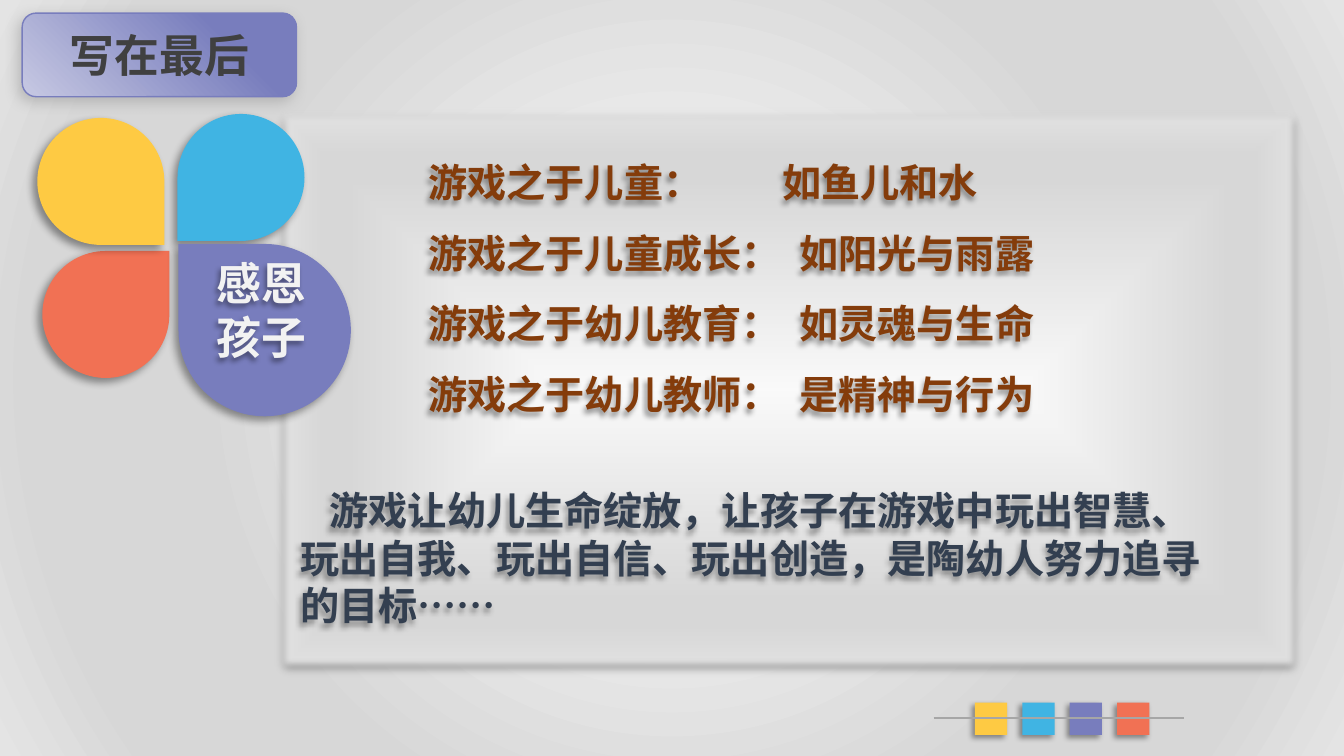
"""Build the closing slide with petals, a glowing panel and verses."""
from dataclasses import dataclass

import lxml.etree
import pptx
import pptx.dml.color
import pptx.enum.shapes
import pptx.enum.text
import pptx.oxml.ns
import pptx.util

Inches = pptx.util.Inches
Pt = pptx.util.Pt
Kind = pptx.enum.shapes.MSO_SHAPE
qn = pptx.oxml.ns.qn

FONT = "Noto Sans CJK SC"
HUES = {
    "yellow": "FECA43", "blue": "40B4E3", "violet": "787DBD", "coral": "F17154",
    "lilac": "C7C9E3", "rule": "A6A6A6", "title": "404040", "pale": "F2F2F2",
    "brown": "843C0B", "slate": "333F50", "black": "000000", "gray": "808080",
    "white": "FFFFFF", "snow": "FAFAFA", "silver": "D7D7D7", "mist": "E4E4E4",
}


@dataclass
class Petal:
    left: float
    top: float
    size: float
    turn: int
    hue: str


@dataclass
class Shade:
    blur: float
    dist: float
    angle: int = 135
    hue: str = "black"


@dataclass
class Block:
    box: tuple[float, float, float, float]
    lines: list[str]
    size: int
    hue: str
    space: float = 1.0
    indent: float = 0
    tabs: tuple[float, ...] = ()


PETALS = [
    Petal(1.76, 1.13, 1.26, 180, "blue"),
    Petal(0.42, 2.49, 1.26, 0, "coral"),
    Petal(0.37, 1.17, 1.26, 90, "yellow"),
    Petal(1.77, 2.42, 1.71, 270, "violet"),
]
BLOCKS = [
    Block((2.88, 4.78, 9.32, 1.51),
          ["游戏让幼儿生命绽放，让孩子在游戏中玩出智慧、玩出自我、玩出自信、"
           "玩出创造，是陶幼人努力追寻的目标……"], 28, "slate", indent=0.29),
    Block((2.05, 2.49, 1.35, 1.18), ["感恩", "孩子"], 32, "pale"),
    Block((4.15, 1.29, 7.43, 2.85),
          ["游戏之于儿童：\t如鱼儿和水", "游戏之于儿童成长：\t如阳光与雨露",
           "游戏之于幼儿教育：\t如灵魂与生命", "游戏之于幼儿教师：\t是精神与行为"],
          28, "brown", space=1.5, tabs=(3.51, 3.68, 3.68, 3.68)),
]


def color(hue: str):
    return pptx.dml.color.RGBColor.from_string(HUES[hue])


def add(host, tag: str, **attrs):
    return lxml.etree.SubElement(host, qn(tag), {k: str(v) for k, v in attrs.items()})


def blend(host, stops: list[tuple[int, str]], shape: str = "", angle: int = 0) -> None:
    old = host.find(qn("a:solidFill"))
    grad = lxml.etree.Element(qn("a:gradFill"), rotWithShape="1")
    row = add(grad, "a:gsLst")
    for place, hue in stops:
        add(add(row, "a:gs", pos=place * 1000), "a:srgbClr", val=HUES[hue])
    if shape:
        way = add(grad, "a:path", path=shape)
        add(way, "a:fillToRect", l=50000, t=50000, r=50000, b=50000)
    else:
        add(grad, "a:lin", ang=angle * 60000, scaled=0)
    host.replace(old, grad)


def cast(shape, shade: Shade):
    shape.shadow.inherit = False
    list_ = shape.element.spPr.find(qn("a:effectLst"))
    drop = add(list_, "a:outerShdw", blurRad=Pt(shade.blur), dist=Pt(shade.dist),
               dir=shade.angle * 60000, algn="ctr", rotWithShape=0)
    add(add(drop, "a:srgbClr", val=HUES[shade.hue]), "a:alpha", val=40000)
    return list_


def draw(slide, kind, box: tuple[float, ...], hue: str):
    shape = slide.shapes.add_shape(kind, *map(Inches, box))
    shape.fill.solid()
    shape.fill.fore_color.rgb = color(hue)
    shape.line.fill.background()
    return shape


def style(part, size: int, hue: str) -> None:
    for run in part.runs:
        run.font.size = Pt(size)
        run.font.bold = True
        run.font.color.rgb = color(hue)
        run.font.name = FONT
        add(run.font._element, "a:ea", typeface=FONT)


def write(slide, block: Block) -> None:
    shape = slide.shapes.add_textbox(*map(Inches, block.box))
    cast(shape, Shade(4, 3))
    frame = shape.text_frame
    frame.word_wrap = True
    frame.text = "\n".join(block.lines)
    for part in frame.paragraphs:
        part.line_spacing = block.space
        style(part, block.size, block.hue)
        if block.indent:
            part._p.get_or_add_pPr().set("indent", str(Inches(block.indent)))
    for part, stop in zip(frame.paragraphs, block.tabs):
        row = add(part._p.get_or_add_pPr(), "a:tabLst")
        add(row, "a:tab", pos=Inches(stop), algn="l")


def main() -> None:
    deck = pptx.Presentation()
    deck.slide_width, deck.slide_height = Inches(13.33), Inches(7.5)
    slide = deck.slides.add_slide(deck.slide_layouts[6])
    slide.background.fill.solid()
    slide.background.fill.fore_color.rgb = color("silver")
    edge = [(74, "silver"), (83, "silver"), (100, "mist")]
    blend(slide.element.find(".//" + qn("p:bgPr")),
          [(0, "white"), (62, "silver"), *edge[1:]], "circle")

    panel = draw(slide, Kind.RECTANGLE, (2.73, 1.06, 10.19, 5.62), "snow")
    blend(panel.element.spPr, [(0, "snow"), *edge], "rect")
    add(cast(panel, Shade(4, 3, 90)), "a:softEdge", rad=Pt(5))

    for petal in PETALS:
        box = (petal.left, petal.top, petal.size, petal.size)
        shape = draw(slide, Kind.TEAR, box, petal.hue)
        shape.rotation = petal.turn
        cast(shape, Shade(6, 4))

    for i, hue in enumerate(["yellow", "blue", "violet", "coral"]):
        tile = draw(slide, Kind.RECTANGLE, (9.67 + 0.47 * i, 6.97, 0.32, 0.32), hue)
        cast(tile, Shade(4, 3))

    for start, end in [(9.39, 11.74), (9.26, 11.71)]:
        rule = slide.shapes.add_connector(
            pptx.enum.shapes.MSO_CONNECTOR.STRAIGHT,
            Inches(start), Inches(7.12), Inches(end), Inches(7.12))
        rule.line.color.rgb = color("rule")
        rule.line.width = Pt(1.5)
        add(rule.element.spPr, "a:effectLst")

    for block in BLOCKS:
        write(slide, block)

    title = draw(slide, Kind.ROUNDED_RECTANGLE, (0.22, 0.13, 2.72, 0.83), "violet")
    blend(title.element.spPr, [(0, "lilac"), (74, "violet"), (100, "violet")], angle=315)
    title.line.color.rgb = color("violet")
    title.line.width = Pt(1)
    cast(title, Shade(10, 4, hue="gray"))
    title.text_frame.text = "写在最后"
    title.text_frame.vertical_anchor = pptx.enum.text.MSO_ANCHOR.MIDDLE
    head = title.text_frame.paragraphs[0]
    head.alignment = pptx.enum.text.PP_ALIGN.CENTER
    style(head, 32, "title")

    deck.save("out.pptx")


if __name__ == "__main__":
    main()
